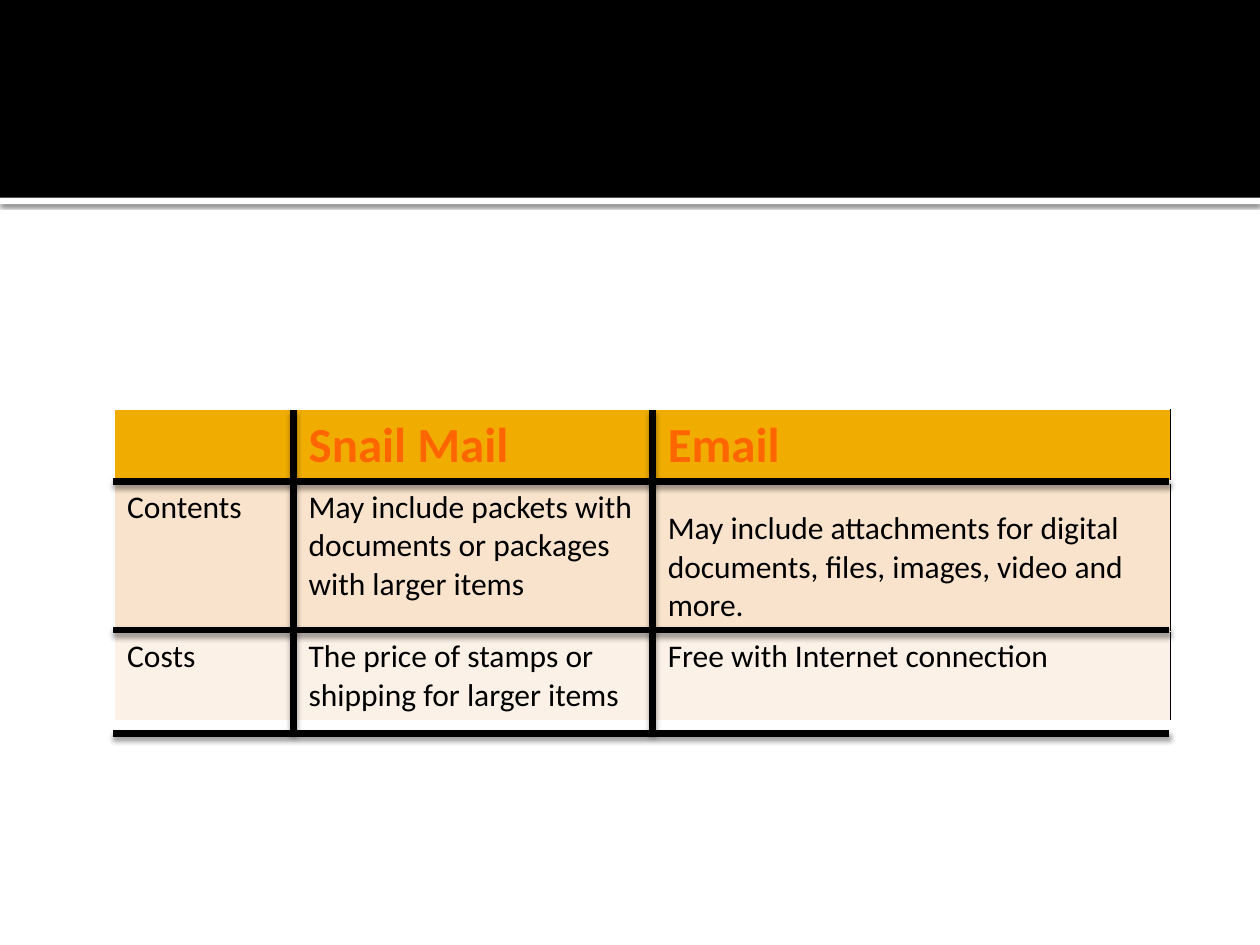
from itertools import accumulate

from lxml.etree import SubElement
from pptx import Presentation
from pptx.dml.color import RGBColor
from pptx.enum.shapes import MSO_CONNECTOR as Connector, MSO_SHAPE as Preset
from pptx.oxml.ns import qn
from pptx.util import Inches, Pt

COLORS = {
    "black": "000000", "white": "FFFFFF", "gold": "F0AD00",
    "orange": "FF6600", "peach": "F9E3CC", "cream": "FCF1E7",
}
CONTENT = [
    ["", "Snail Mail", "Email"],
    ["Contents", "May include packets with documents or packages with larger items",
     "May include attachments for digital documents, files, images, video and more."],
    ["Costs", "The price of stamps or shipping for larger items",
     "Free with Internet connection"],
]
HEADER = {"size": Pt(28), "bold": True, "color": "orange"}
BODY = {"size": Pt(18), "bold": False, "color": "black"}
ROW_STYLES = [("gold", HEADER), ("peach", BODY), ("cream", BODY)]

# Grid units: 100 columns by 75 rows on the slide
LEFT, TOP = 9.1, 32.5
COLUMNS = [14.4, 28.5, 40.9]
ROWS = [5.7, 11.8, 7.1]
RULE_LEFT, RULE_RIGHT, RULE_BOTTOM = 9, 92.8, 58.2


class ComparisonSlide:
    font = "Calibri"
    unit = Inches(0.1)

    def __init__(self, deck):
        self.slide = deck.slides.add_slide(deck.slide_layouts[6])
        self.shapes = self.slide.shapes

    def grid(self, *lengths):
        return [round(length * self.unit) for length in lengths]

    def color(self, name):
        return RGBColor.from_string(COLORS[name])

    def paint(self, fill, name):
        fill.solid()
        fill.fore_color.rgb = self.color(name)

    def add_shadow(self, shape, alpha, blur, distance):
        effects = SubElement(shape.element.spPr, qn("a:effectLst"))
        outer = SubElement(effects, qn("a:outerShdw"), blurRad=str(Pt(blur)),
                           dist=str(Pt(distance)), dir="5400000", rotWithShape="0")
        black = SubElement(outer, qn("a:srgbClr"), val=COLORS["black"])
        SubElement(black, qn("a:alpha"), val=str(alpha * 1000))

    def band(self, top, height, name, shadow=None):
        """Draw a bar over the full slide width."""
        bar = self.shapes.add_shape(Preset.RECTANGLE, *self.grid(0, top, 100, height))
        self.paint(bar.fill, name)
        bar.line.fill.background()
        if shadow:
            self.add_shadow(bar, *shadow)
        else:
            bar.shadow.inherit = False

    def rule(self, *ends):
        line = self.shapes.add_connector(Connector.STRAIGHT, *self.grid(*ends))
        line.line.color.rgb = self.color("black")
        line.line.width = Pt(3.82)
        self.add_shadow(line, 38, 3.1, 2)

    def border(self, cell, side, name, width):
        edge = SubElement(cell._tc.get_or_add_tcPr(), qn(f"a:ln{side}"), w=str(Pt(width)))
        SubElement(SubElement(edge, qn("a:solidFill")), qn("a:srgbClr"), val=COLORS[name])

    def cell_text(self, cell, text, style):
        if not text:
            return
        run = cell.text_frame.paragraphs[0].add_run()
        run.text = text
        for key, value in {**style, "name": self.font}.items():
            if key == "color":
                run.font.color.rgb = self.color(value)
            else:
                setattr(run.font, key, value)

    def table(self, left, top, columns, rows, content, row_styles):
        frame = self.shapes.add_table(len(rows), len(columns),
                                      *self.grid(left, top, sum(columns), sum(rows)))
        table = frame.table
        for column, width in zip(table.columns, self.grid(*columns)):
            column.width = width
        for row, height in zip(table.rows, self.grid(*rows)):
            row.height = height
        for r, (texts, (fill, style)) in enumerate(zip(content, row_styles)):
            for c, text in enumerate(texts):
                cell = table.cell(r, c)
                right = "black" if c == len(columns) - 1 else "white"
                for side, name, width in [("L", "white", 1), ("R", right, 1),
                                          ("T", "white", 3 if r == 1 else 1),
                                          ("B", "white", 3 if r == 0 else 1)]:
                    self.border(cell, side, name, width)
                self.paint(cell.fill, fill)
                self.cell_text(cell, text, style)
        return table


def main():
    deck = Presentation()
    deck.slide_width, deck.slide_height = Inches(10), Inches(7.5)
    page = ComparisonSlide(deck)

    page.band(15.7, 0.5, "white", shadow=(60, 2.5, 0.8))
    page.band(0, 15.7, "black")

    comparison = page.table(LEFT, TOP, COLUMNS, ROWS, CONTENT, ROW_STYLES)
    comparison.cell(1, 2).margin_top = Inches(0.22)

    row_ends = list(accumulate(ROWS, initial=TOP))[1:-1]
    for y in [*row_ends, RULE_BOTTOM]:
        page.rule(RULE_LEFT, y, RULE_RIGHT, y)
    for x in list(accumulate(COLUMNS, initial=LEFT))[1:-1]:
        page.rule(x - 0.2, RULE_BOTTOM, x - 0.2, TOP)

    deck.save("out.pptx")


if __name__ == "__main__":
    main()
